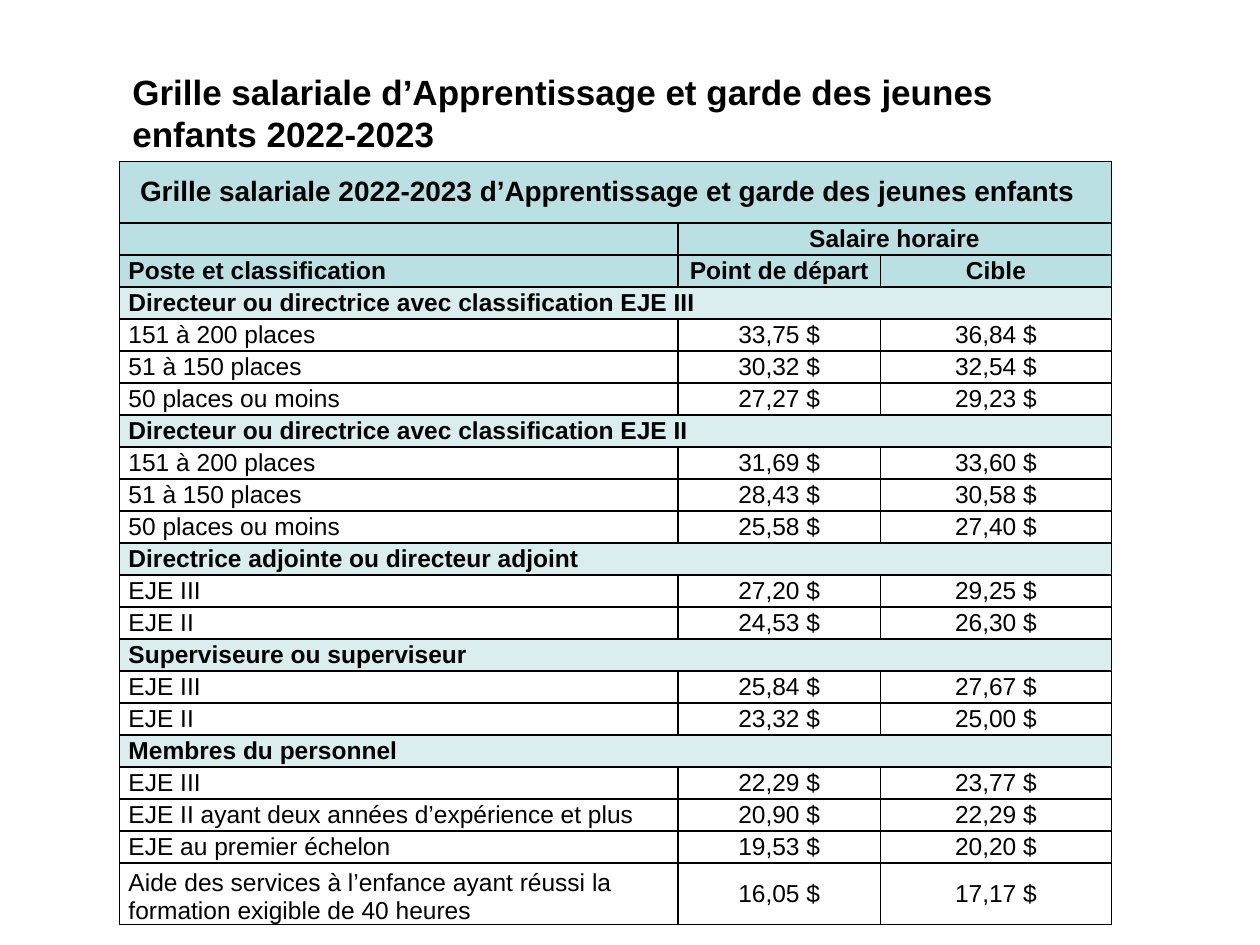
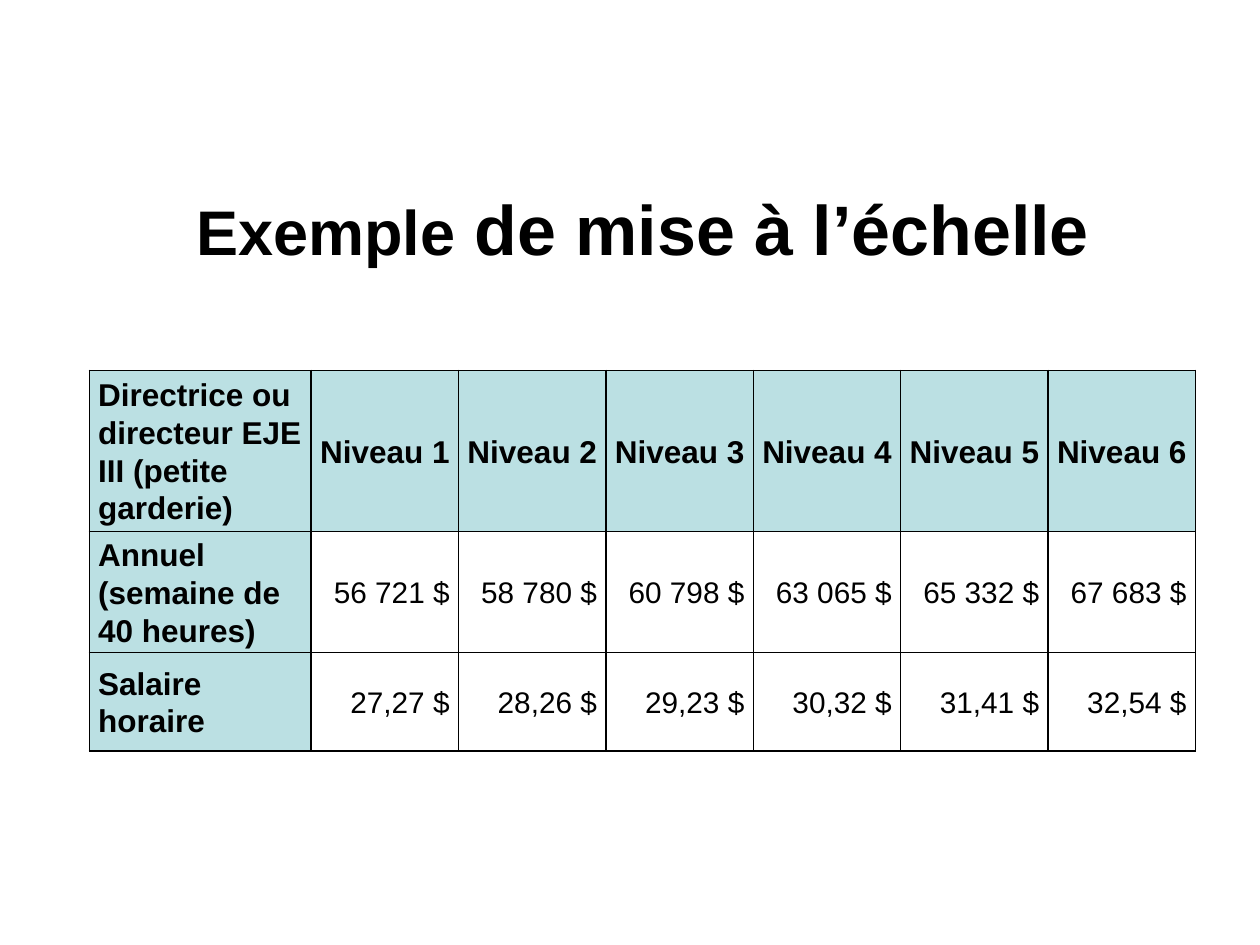
import lxml.etree as etree
import pptx
import pptx.dml.color
import pptx.enum.text
import pptx.oxml.ns
import pptx.util

Inches, Pt = pptx.util.Inches, pptx.util.Pt
RGBColor = pptx.dml.color.RGBColor
ALIGN = pptx.enum.text.PP_ALIGN
ANCHOR = pptx.enum.text.MSO_ANCHOR
qn = pptx.oxml.ns.qn

BLACK = RGBColor(0x00, 0x00, 0x00)
WHITE = RGBColor(0xFF, 0xFF, 0xFF)
TEAL = RGBColor(0xBB, 0xE0, 0xE3)
PALE_TEAL = RGBColor(0xDA, 0xED, 0xEF)
FONT = "Arial"

GRID_TITLE = "Grille salariale 2022-2023 d’Apprentissage et garde des jeunes enfants"
SALARY_GROUPS = [
    ("Directeur ou directrice avec classification EJE III", [
        ("151 à 200 places", "33,75 $", "36,84 $"),
        ("51 à 150 places", "30,32 $", "32,54 $"),
        ("50 places ou moins", "27,27 $", "29,23 $")]),
    ("Directeur ou directrice avec classification EJE II", [
        ("151 à 200 places", "31,69 $", "33,60 $"),
        ("51 à 150 places", "28,43 $", "30,58 $"),
        ("50 places ou moins", "25,58 $", "27,40 $")]),
    ("Directrice adjointe ou directeur adjoint", [
        ("EJE III", "27,20 $", "29,25 $"),
        ("EJE II", "24,53 $", "26,30 $")]),
    ("Superviseure ou superviseur", [
        ("EJE III", "25,84 $", "27,67 $"),
        ("EJE II", "23,32 $", "25,00 $")]),
    ("Membres du personnel", [
        ("EJE III", "22,29 $", "23,77 $"),
        ("EJE II ayant deux années d’expérience et plus", "20,90 $", "22,29 $"),
        ("EJE au premier échelon", "19,53 $", "20,20 $"),
        ("Aide des services à l’enfance ayant réussi la formation exigible "
         "de 40 heures", "16,05 $", "17,17 $")]),
]
LEVEL_ROWS = [
    ["Directrice ou directeur EJE III (petite garderie)"]
    + [f"Niveau {n}" for n in range(1, 7)],
    ["Annuel\n(semaine de 40 heures)", "56 721 $", "58 780 $", "60 798 $",
     "63 065 $", "65 332 $", "67 683 $"],
    ["Salaire horaire", "27,27 $", "28,26 $", "29,23 $", "30,32 $", "31,41 $",
     "32,54 $"],
]


class Deck:
    def __init__(self, prs):
        self.prs = prs
        self.s = None

    def add_slide(self):
        self.s = self.prs.slides.add_slide(self.prs.slide_layouts[5])

    def title(self, box, runs, align):
        """Place the title; runs is a list of (text, size)."""
        sp = self.s.shapes.title
        sp.left, sp.top, sp.width, sp.height = map(Inches, box)
        tf = sp.text_frame
        tf.word_wrap = True
        tf.auto_size = pptx.enum.text.MSO_AUTO_SIZE.NONE
        tf.vertical_anchor = ANCHOR.MIDDLE
        p = tf.paragraphs[0]
        p.alignment = align
        self.style(p.font, None, True)
        for text, size in runs:
            r = p.add_run()
            r.text = text
            r.font.size = Pt(size)

    def style(self, font, size, bold):
        font.name = FONT
        font.bold = bold
        font.color.rgb = BLACK
        if size:
            font.size = Pt(size)

    def table(self, left, top, widths, heights):
        tbl = self.s.shapes.add_table(
            len(heights), len(widths), Inches(left), Inches(top),
            Inches(sum(widths)), Inches(sum(heights))).table
        tbl.first_row = tbl.horz_banding = False
        for col, width in zip(tbl.columns, widths):
            col.width = Inches(width)
        for row, height in zip(tbl.rows, heights):
            row.height = Inches(height)
        return tbl

    def cell(self, cell, text, fill, size, bold=False, align=ALIGN.LEFT,
             after=0, spacing=None):
        cell.margin_left = cell.margin_right = Inches(0.07)
        cell.margin_top = cell.margin_bottom = 0
        cell.vertical_anchor = ANCHOR.MIDDLE
        self.borders(cell)
        cell.fill.solid()
        cell.fill.fore_color.rgb = fill
        cell.text = text
        for p in cell.text_frame.paragraphs:
            p.alignment = align
            p.space_after = Pt(after)
            p.line_spacing = spacing
            self.style(p.font, size, bold)
            if not text:
                etree.SubElement(p._p, qn("a:endParaRPr"), sz=str(size * 100))

    def borders(self, cell):
        tcPr = cell._tc.get_or_add_tcPr()
        for side in ("a:lnL", "a:lnR", "a:lnT", "a:lnB"):
            ln = etree.SubElement(tcPr, qn(side), w=str(Pt(1)))
            fill = etree.SubElement(ln, qn("a:solidFill"))
            etree.SubElement(fill, qn("a:srgbClr"), val=str(BLACK))


def salary_grid(deck):
    deck.add_slide()
    deck.title((0.95, 0.5, 7.06, 0.78),
               [("Grille salariale d’Apprentissage et garde des jeunes "
                 "enfants 2022-2023", 20)], ALIGN.LEFT)

    rows = [((GRID_TITLE, "", ""), TEAL),
            (("", "Salaire horaire", ""), TEAL),
            (("Poste et classification", "Point de départ", "Cible"), TEAL)]
    for group, posts in SALARY_GROUPS:
        rows.append(((group, "", ""), PALE_TEAL))
        rows += [(post, WHITE) for post in posts]

    tall, total = 0.49, 6.06
    short = (total - 2 * tall) / (len(rows) - 2)
    heights = [tall] + [short] * (len(rows) - 2) + [tall]
    tbl = deck.table(0.95, 1.28, [4.43, 1.61, 1.83], heights)
    for i, (texts, fill) in enumerate(rows):
        for j, text in enumerate(texts):
            deck.cell(tbl.cell(i, j), text, fill, 16 if i == 0 else 14,
                      bold=fill != WHITE,
                      align=ALIGN.CENTER if j or i == 0 else ALIGN.LEFT,
                      after=2)
        if i == 0 or fill == PALE_TEAL:
            tbl.cell(i, 0).merge(tbl.cell(i, 2))
    tbl.cell(1, 1).merge(tbl.cell(1, 2))
    tbl.cell(0, 0).margin_right = Inches(0.2)
    tbl.cell(len(rows) - 1, 0).vertical_anchor = ANCHOR.BOTTOM


def scale_example(deck):
    deck.add_slide()
    deck.title((0.71, 1.18, 8.78, 1.25),
               [("Exemple", 36), (" de mise à l’échelle", 40)], ALIGN.CENTER)
    tbl = deck.table(0.71, 2.94, [1.76] + [1.17] * 6, [1.28, 0.96, 0.78])
    for i, texts in enumerate(LEVEL_ROWS):
        for j, text in enumerate(texts):
            header = i == 0 or j == 0
            if j == 0:
                align = ALIGN.LEFT
            else:
                align = ALIGN.CENTER if header else ALIGN.RIGHT
            deck.cell(tbl.cell(i, j), text, TEAL if header else WHITE,
                      18 if header else 17, header, align, spacing=1.07)


def main():
    prs = pptx.Presentation()
    prs.slide_width, prs.slide_height = Inches(10), Inches(7.5)
    deck = Deck(prs)
    salary_grid(deck)
    scale_example(deck)
    prs.save("out.pptx")


if __name__ == "__main__":
    main()
